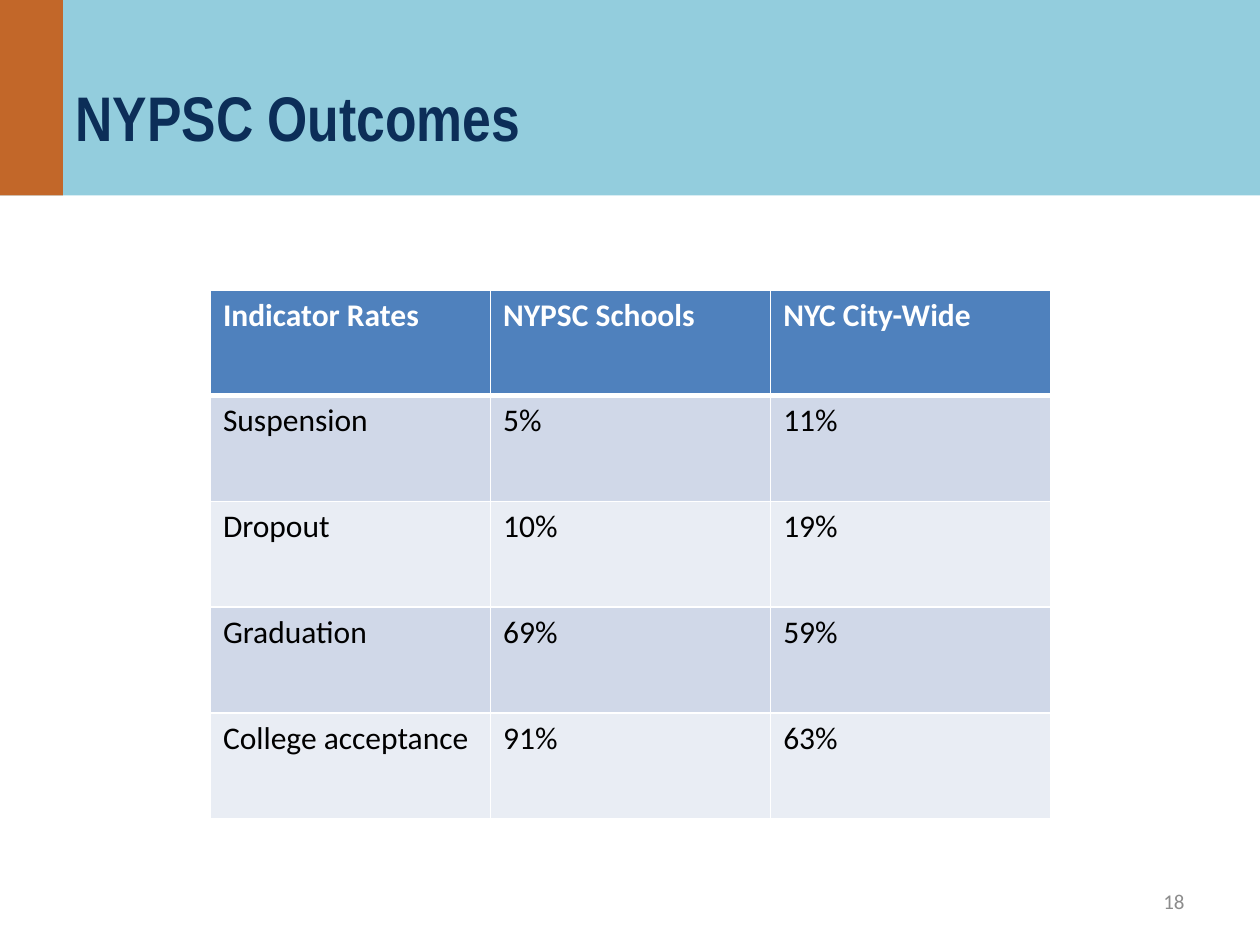
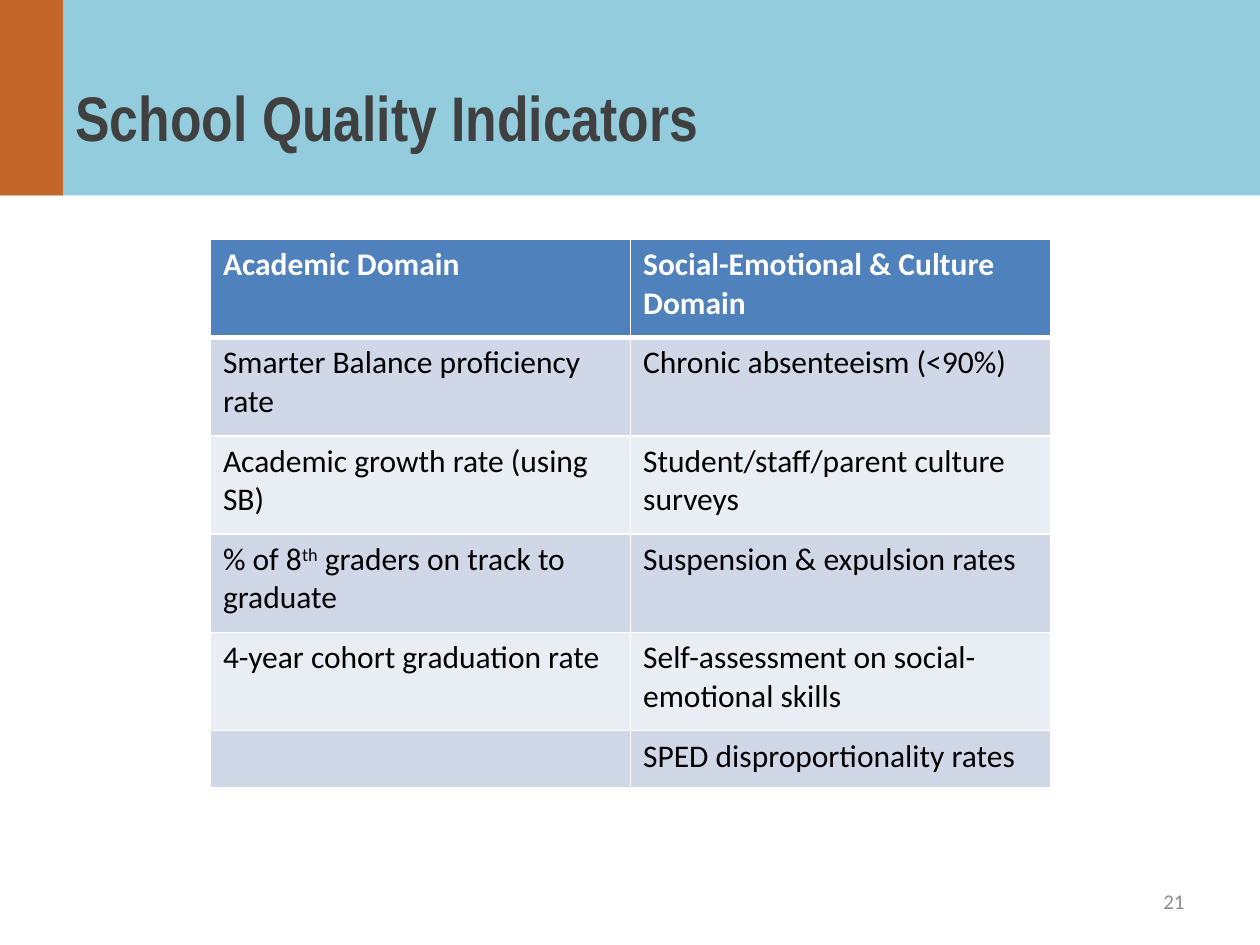
from lxml.etree import SubElement
from pptx import Presentation
from pptx.dml.color import RGBColor
from pptx.enum.shapes import MSO_SHAPE
from pptx.enum.text import MSO_ANCHOR, PP_ALIGN
from pptx.oxml.ns import qn
from pptx.util import Inches, Pt

COLORS = {
    "band": "93CDDD",
    "accent": "C26729",
    "navy": "0C2E58",
    "charcoal": "404040",
    "number": "8C8C8C",
    "header": "4F81BD",
    "odd": "D0D8E8",
    "even": "E9EDF4",
    "white": "FFFFFF",
    "black": "000000",
}
TABLE_LEFT, TABLE_WIDTH = 1.67, 6.67

SLIDES = [
    {
        "title": "NYPSC Outcomes",
        "title_color": "navy",
        "number": "18",
        "top": 2.3,
        "heights": [0.84] * 5,
        "rows": [
            ["Indicator Rates", "NYPSC Schools", "NYC City-Wide"],
            ["Suspension", "5%", "11%"],
            ["Dropout", "10%", "19%"],
            ["Graduation", "69%", "59%"],
            ["College acceptance", "91%", "63%"],
        ],
    },
    {
        "title": "School Quality Indicators",
        "title_color": "charcoal",
        "number": "21",
        "top": 1.9,
        "heights": [0.78] * 5 + [0.45],
        "rows": [
            ["Academic Domain", "Social-Emotional & Culture Domain"],
            ["Smarter Balance proficiency rate", "Chronic absenteeism (<90%)"],
            ["Academic growth rate (using SB)", "Student/staff/parent culture surveys"],
            ["% of 8^th^ graders on track to graduate", "Suspension & expulsion rates"],
            ["4-year cohort graduation rate", "Self-assessment on social-emotional skills"],
            ["", "SPED disproportionality rates"],
        ],
    },
]


def style_font(font, name, size, color, bold=False):
    font.name = name
    font.size = Pt(size)
    font.bold = bold
    font.color.rgb = RGBColor.from_string(COLORS[color])


def add_border(cell, side, width):
    line = SubElement(cell._tc.get_or_add_tcPr(), qn(f"a:ln{side}"), w=str(Pt(width)))
    fill = SubElement(line, qn("a:solidFill"))
    SubElement(fill, qn("a:srgbClr"), val=COLORS["white"])


deck = Presentation()
deck.slide_width, deck.slide_height = Inches(10), Inches(7.5)
layout = deck.slide_layouts.get_by_name("Title Only")

layout_title = layout.placeholders[0]
layout_title.left, layout_title.top = Inches(0.5), Inches(0.3)
layout_title.width, layout_title.height = Inches(9), Inches(1.25)
layout_title.text_frame.vertical_anchor = MSO_ANCHOR.MIDDLE

for index, content in enumerate(SLIDES):
    page = deck.slides.add_slide(layout)

    if index == 0:
        for order, (width, color) in enumerate([(10, "band"), (0.5, "accent")]):
            band = page.shapes.add_shape(MSO_SHAPE.RECTANGLE, 0, 0, Inches(width), Inches(1.55))
            band.shadow.inherit = False
            band.fill.solid()
            band.fill.fore_color.rgb = RGBColor.from_string(COLORS[color])
            band.line.fill.background()
            band.element.nvSpPr.cNvPr.set("id", str(20 + order))
            layout.shapes.element.insert(2 + order, band.element)

    title = page.shapes.title
    title.text_frame.text = content["title"]
    para = title.text_frame.paragraphs[0]
    para.alignment = PP_ALIGN.LEFT
    style_font(para.runs[0].font, "Arial Narrow", 36, content["title_color"], True)

    box = page.shapes.add_textbox(Inches(7.17), Inches(6.95), Inches(2.33), Inches(0.4))
    box.text_frame.word_wrap = True
    box.text_frame.vertical_anchor = MSO_ANCHOR.MIDDLE
    box.text_frame.text = content["number"]
    para = box.text_frame.paragraphs[0]
    para.alignment = PP_ALIGN.RIGHT
    style_font(para.runs[0].font, "Calibri", 12, "number")

    rows = content["rows"]
    column_count = len(rows[0])
    table = page.shapes.add_table(
        len(rows), column_count, Inches(TABLE_LEFT), Inches(content["top"]),
        Inches(TABLE_WIDTH), Inches(sum(content["heights"])),
    ).table
    for column in table.columns:
        column.width = Inches(TABLE_WIDTH / column_count)

    for row_index, (texts, height) in enumerate(zip(rows, content["heights"])):
        table.rows[row_index].height = Inches(height)
        is_header = row_index == 0
        shade = "header" if is_header else ("even", "odd")[row_index % 2]
        borders = {"L": 1, "R": 1, "T": 3 if row_index == 1 else 1, "B": 3 if is_header else 1}
        for column_index, text in enumerate(texts):
            cell = table.cell(row_index, column_index)
            for side, width in borders.items():
                add_border(cell, side, width)
            cell.fill.solid()
            cell.fill.fore_color.rgb = RGBColor.from_string(COLORS[shade])
            if not text:
                continue
            para = cell.text_frame.paragraphs[0]
            for part_index, part in enumerate(text.split("^")):
                span = para.add_run()
                span.text = part
                style_font(span.font, "Calibri", 18, "white" if is_header else "black", is_header)
                if part_index % 2:
                    span._r.get_or_add_rPr().set("baseline", "30000")

deck.save("out.pptx")
